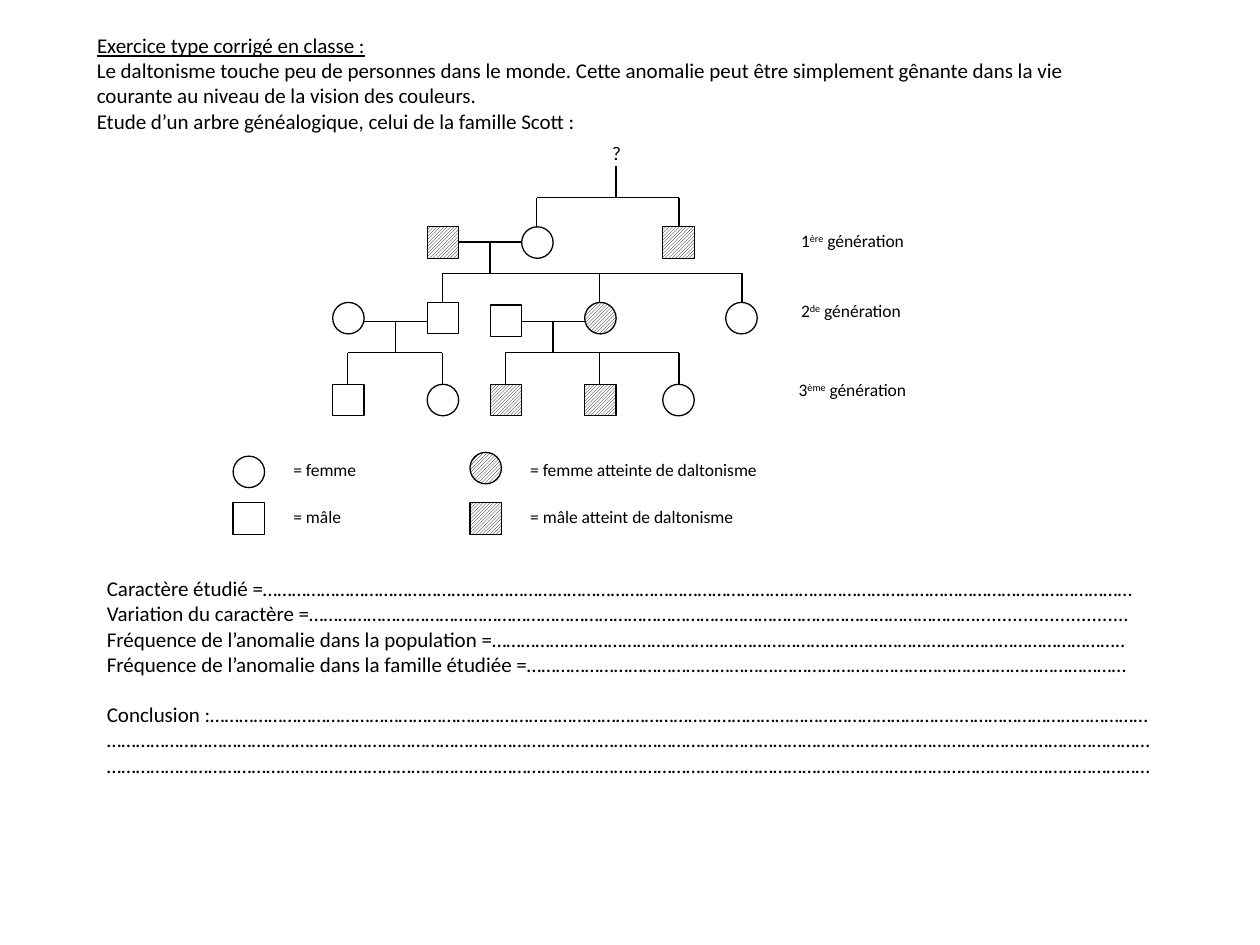
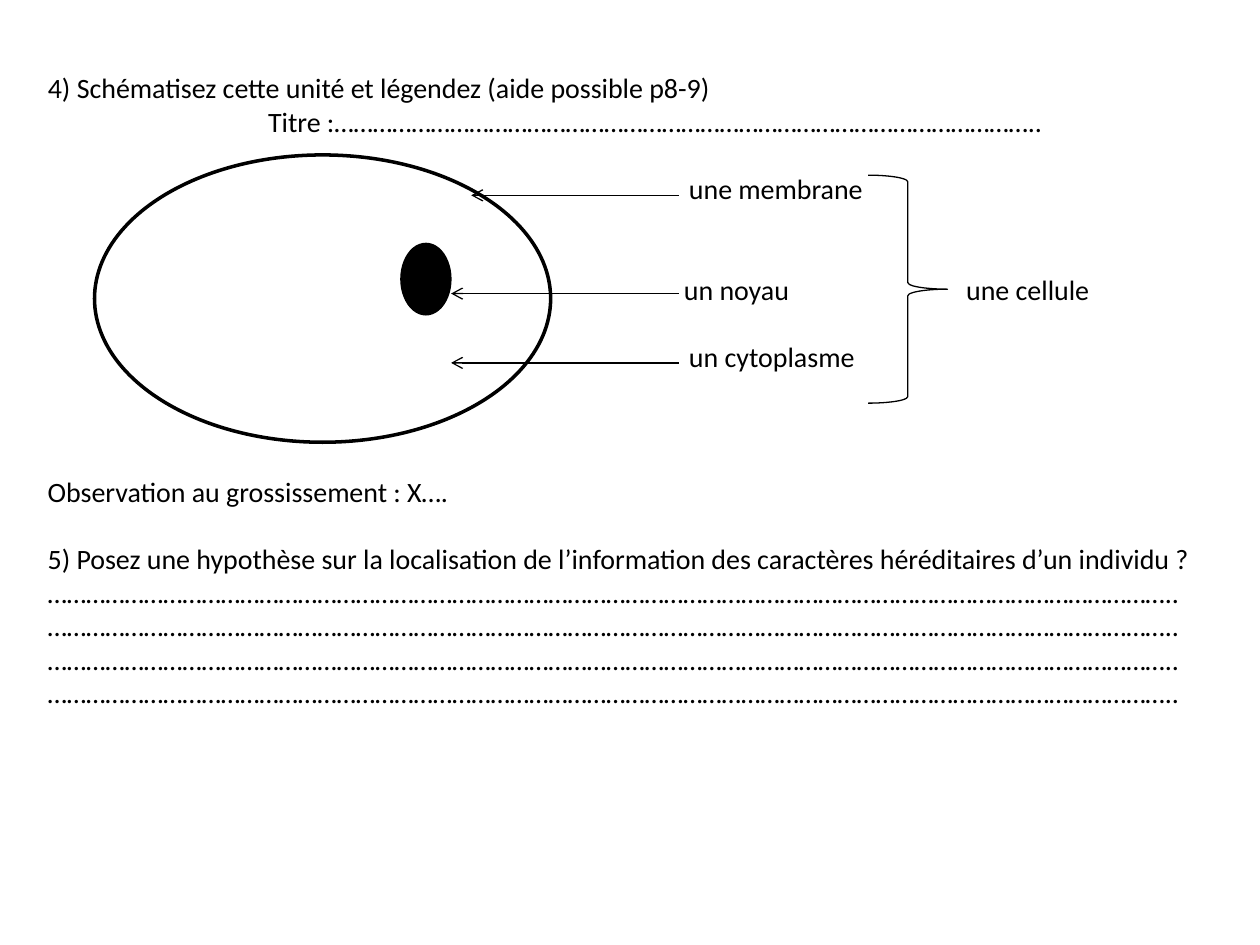
"""Build two worksheet slides: a family tree of colour blindness and a cell diagram."""
import pptx
import pptx.dml.color
import pptx.enum.dml
import pptx.enum.shapes
import pptx.enum.text
import pptx.oxml
import pptx.oxml.ns
import pptx.util

Inches = pptx.util.Inches
Pt = pptx.util.Pt
SHAPE = pptx.enum.shapes.MSO_SHAPE
COLORS = {"ink": "000000", "paper": "FFFFFF"}
FONT = {"name": "Calibri", "bold": False, "italic": False}
FRAME = {
    "word_wrap": True,
    "auto_size": pptx.enum.text.MSO_AUTO_SIZE.NONE,
    "vertical_anchor": pptx.enum.text.MSO_ANCHOR.TOP,
    "margin_left": Inches(0.1),
    "margin_right": Inches(0.1),
    "margin_top": Inches(0.05),
    "margin_bottom": Inches(0.05),
}
SYMBOL = 0.25


def rgb(name):
    return pptx.dml.color.RGBColor.from_string(COLORS[name])


def apply(target, values):
    for name, value in values.items():
        setattr(target, name, value)


def dots(count):
    return "…" * count


class Sheet:
    def __init__(self, prs):
        self.prs = prs
        self.slide = None

    def new(self, title, left, top, width, size, **font):
        self.slide = self.prs.slides.add_slide(self.prs.slide_layouts[5])
        sp = self.slide.shapes.title
        box = {"left": left, "top": top, "width": width, "height": 0.4}
        apply(sp, {name: Inches(value) for name, value in box.items()})
        self.set_lines(sp.text_frame, [title], size, **font)

    def set_lines(self, tf, lines, size, **font):
        apply(tf, FRAME)
        for i, line in enumerate(lines):
            p = tf.paragraphs[0] if i == 0 else tf.add_paragraph()
            p.alignment = pptx.enum.text.PP_ALIGN.LEFT
            for text, baseline in [(line, 0)] if isinstance(line, str) else line:
                r = p.add_run()
                r.text = text
                apply(r.font, {**FONT, "size": Pt(size), **font})
                r.font.color.rgb = rgb("ink")
                if baseline:
                    r.font._element.set("baseline", str(baseline * 1000))

    def text(self, lines, left, top, width, height, size):
        sp = self.slide.shapes.add_textbox(*map(Inches, (left, top, width, height)))
        self.set_lines(sp.text_frame, lines, size)
        return sp.text_frame

    def shape(self, kind, left, top, width, height, fill=None, weight=0.75):
        sp = self.slide.shapes.add_shape(kind, *map(Inches, (left, top, width, height)))
        sp.shadow.inherit = False
        sp.line.color.rgb = rgb("ink")
        sp.line.width = Pt(weight)
        if fill == "hatch":
            sp.fill.patterned()
            sp.fill.pattern = pptx.enum.dml.MSO_PATTERN.DARK_UPWARD_DIAGONAL
            sp.fill.fore_color.rgb = rgb("ink")
            sp.fill.back_color.rgb = rgb("paper")
        elif fill:
            sp.fill.solid()
            sp.fill.fore_color.rgb = rgb(fill)
        else:
            sp.fill.background()

    def line(self, x1, y1, x2, y2, arrow=False):
        straight = pptx.enum.shapes.MSO_CONNECTOR.STRAIGHT
        sp = self.slide.shapes.add_connector(straight, *map(Inches, (x1, y1, x2, y2)))
        sp.line.color.rgb = rgb("ink")
        sp.line.width = Pt(0.75)
        if arrow:
            head = pptx.oxml.parse_xml(
                f'<a:headEnd {pptx.oxml.ns.nsdecls("a")} type="arrow"/>')
            sp.line._get_or_add_ln().append(head)
        effects = pptx.oxml.parse_xml(f'<a:effectLst {pptx.oxml.ns.nsdecls("a")}/>')
        sp._element.spPr.append(effects)

    def person(self, sex, left, top, affected=False):
        kind = SHAPE.OVAL if sex == "F" else SHAPE.RECTANGLE
        self.shape(kind, left, top, SYMBOL, SYMBOL, "hatch" if affected else "paper")

    def siblings(self, parent_x, top, children):
        bar = top + SYMBOL
        self.line(parent_x, top, parent_x, bar)
        self.line(children[0], bar, children[-1], bar)
        for x in children:
            self.line(x, bar, x, bar + SYMBOL)


def build_family_tree(sheet):
    sheet.new("Exercice type corrigé en classe :", 0.67, 0.21, 8.5, 12, underline=True)
    sheet.text([
        "Le daltonisme touche peu de personnes dans le monde. Cette anomalie peut être "
        "simplement gênante dans la vie courante au niveau de la vision des couleurs.",
        "Etude d’un arbre généalogique, celui de la famille Scott :",
    ], 0.67, 0.41, 8.5, 0.74, 12)

    sheet.text(["?"], 4.76, 1.07, 0.38, 0.25, 11)
    for parent_x, top, children in [
        (4.89, 1.32, [4.26, 5.39]),
        (3.89, 1.92, [3.51, 4.76, 5.89]),
        (3.14, 2.55, [2.76, 3.51]),
        (4.39, 2.55, [4.01, 4.76, 5.39]),
    ]:
        sheet.siblings(parent_x, top, children)
    for left, y in [(3.64, 1.92), (2.89, 2.55), (4.14, 2.55)]:
        sheet.line(left, y, left + 0.5, y)
    for person in [
        ("M", 3.39, 1.8, True), ("F", 4.14, 1.8), ("M", 5.26, 1.8, True),
        ("F", 2.64, 2.4), ("M", 3.39, 2.4), ("M", 3.89, 2.42),
        ("F", 4.64, 2.4, True), ("F", 5.76, 2.4),
        ("M", 2.64, 3.05), ("F", 3.39, 3.05), ("M", 3.89, 3.05, True),
        ("M", 4.64, 3.05, True), ("F", 5.26, 3.05),
    ]:
        sheet.person(*person)

    for number, suffix, left, top in [
        ("1", "ère", 6.26, 1.78), ("2", "de", 6.26, 2.33), ("3", "ème", 6.24, 2.96),
    ]:
        label = [(number, 0), (suffix, 30), (" génération", 0)]
        sheet.text([label], left, top, 1.75, 0.29, 10)

    for sex, left, top, affected, label, label_top in [
        ("F", 1.85, 3.62, False, "= femme", 3.59),
        ("M", 1.85, 3.99, False, "= mâle", 3.97),
        ("F", 3.73, 3.59, True, "= femme atteinte de daltonisme", 3.59),
        ("M", 3.73, 3.99, True, "= mâle atteint de daltonisme", 3.97),
    ]:
        sheet.person(sex, left, top, affected)
        sheet.text([label], left + 0.38, label_top, 2.12, 0.25, 10)

    tf = sheet.text([
        "Caractère étudié =" + dots(60),
        "Variation du caractère =" + dots(46) + "." * 29,
        "Fréquence de l’anomalie dans la population =" + dots(43) + "..",
        "Fréquence de l’anomalie dans la famille étudiée =" + dots(17) + "." + dots(24),
        "Conclusion :" + dots(51) + ".." + dots(13),
        dots(72),
        dots(72),
    ], 0.75, 4.52, 8.5, 2.05, 12)
    tf.paragraphs[4].space_before = Pt(14.4)


def build_cell_diagram(sheet):
    left, top, pitch = 0.28, 0.51, 0.267
    sheet.new("4) Schématisez cette unité et légendez (aide possible p8-9)",
              left, top, 9.53, 16)
    question = "5) Posez une hypothèse sur la localisation de l’information des caractères "
    for row, x, width, lines in [
        (1, 2.03, 7, ["Titre :" + dots(36) + ".."]),
        (3, 5.37, 1.8, ["une membrane"]),
        (6, 5.33, 1.8, ["un noyau"]),
        (6, 7.57, 1.8, ["une cellule"]),
        (8, 5.37, 1.8, ["un cytoplasme"]),
        (12, left, 9.53, ["Observation au grossissement : X…."]),
        (14, left, 9.53, [question + "héréditaires d’un individu ?"]
         + [dots(58) + ".."] * 4),
    ]:
        sheet.text(lines, x, top + row * pitch, width, 0.1 + len(lines) * pitch, 16)

    sheet.shape(SHAPE.OVAL, 0.75, 1.23, 3.62, 2.28, weight=2)
    sheet.shape(SHAPE.OVAL, 3.19, 1.94, 0.38, 0.55, "ink", 2)
    for tip, y in [(3.74, 1.55), (3.58, 2.33), (3.58, 2.88)]:
        sheet.line(tip, y, 5.39, y, arrow=True)
    sheet.shape(SHAPE.RIGHT_BRACE, 6.89, 1.39, 0.63, 1.81)


def main():
    prs = pptx.Presentation()
    apply(prs, {"slide_width": Inches(10), "slide_height": Inches(7.5)})
    sheet = Sheet(prs)
    build_family_tree(sheet)
    build_cell_diagram(sheet)
    prs.save("out.pptx")


if __name__ == "__main__":
    main()
